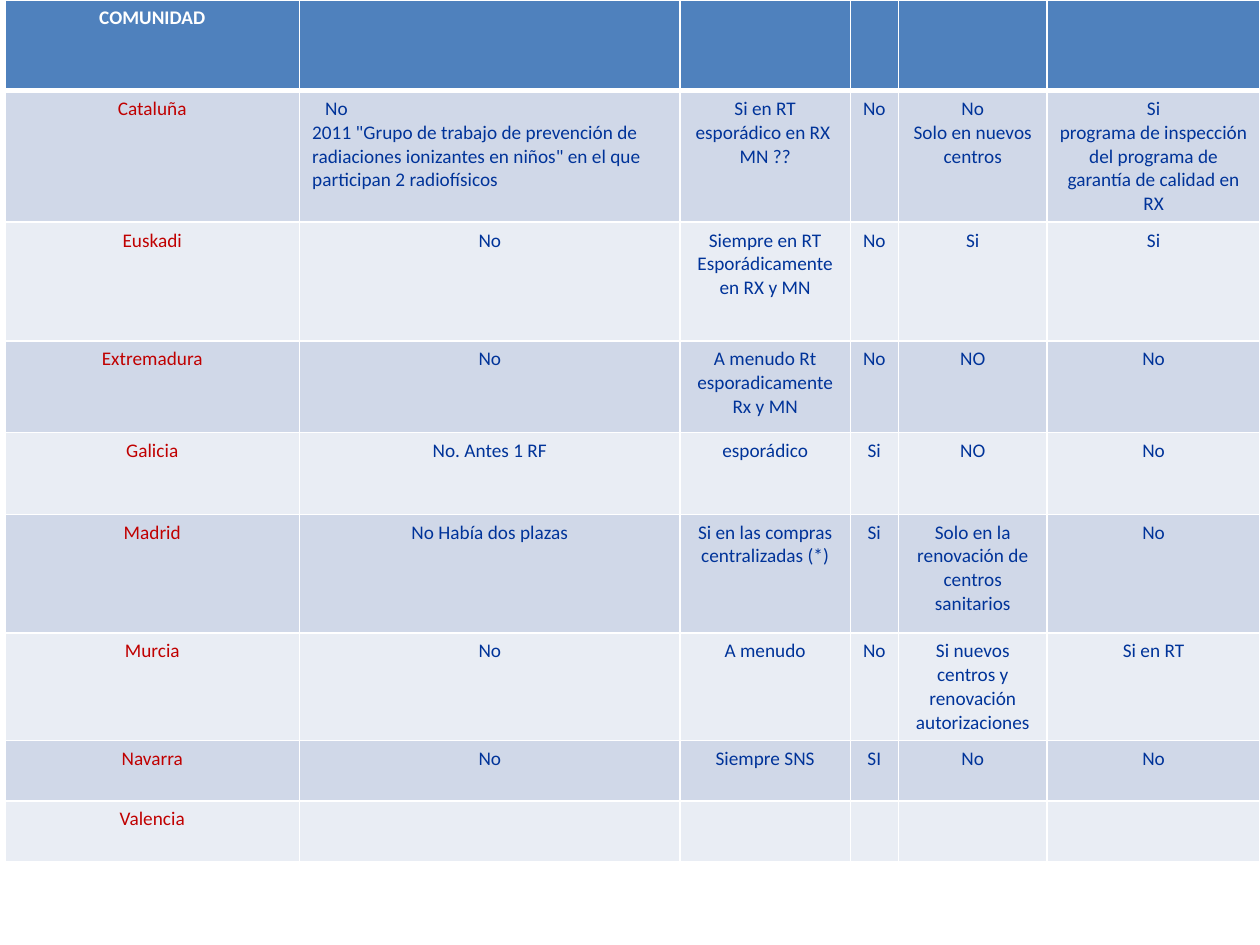
"""Build the slide that compares the regional communities in one table."""
from dataclasses import dataclass

from lxml import etree
from pptx import Presentation
from pptx import util as u
from pptx.dml.color import RGBColor
from pptx.enum import text
from pptx.oxml.ns import qn


@dataclass(frozen=True)
class Theme:
    font: str = "Calibri"
    size: int = 11
    header: str = "4F81BD"
    bands: tuple = ("D0D8E8", "E9EDF4")
    white: str = "FFFFFF"
    community: str = "C00000"
    answer: str = "003399"
    rule: int = 1
    header_rule: int = 3


THEME = Theme()
COLUMN_WIDTHS = (5.94, 7.67, 3.43, 0.97, 3, 4.29)
ROW_HEIGHTS = (1.83, 2.39, 2.39, 1.85, 1.65, 2.39, 1.22, 1.22, 1.22)
COMMUNITIES = (
    ("COMUNIDAD", "", "", "", "", ""),
    ("Cataluña",
     'No\n2011 "Grupo de trabajo de prevención de radiaciones ionizantes '
     'en niños" en el que participan 2 radiofísicos',
     "Si en RT esporádico en RX \nMN ??", "No",
     "No\nSolo en nuevos centros",
     "Si\nprograma de inspección del programa de garantía de calidad en RX"),
    ("Euskadi", "No", "Siempre en RT\nEsporádicamente en RX y MN", "No", "Si", "Si"),
    ("Extremadura", "No", "A menudo Rt esporadicamente Rx y MN", "No", "NO", "No"),
    ("Galicia", "No. Antes 1 RF", "esporádico", "Si", "NO", "No"),
    ("Madrid", "No Había dos plazas", "Si en las compras centralizadas (*)", "Si",
     "Solo en la renovación de centros sanitarios", "No"),
    ("Murcia", "No", "A menudo", "No",
     "Si nuevos centros y renovación autorizaciones", "Si en RT"),
    ("Navarra", "No", "Siempre SNS", "SI", "No", "No"),
    ("Valencia", "", "", "", "", ""),
)


def draw_borders(cell, top, bottom):
    """Rule the four sides of a cell in white, with widths in points."""
    properties = cell._tc.get_or_add_tcPr()
    for side, width in (("L", THEME.rule), ("R", THEME.rule), ("T", top), ("B", bottom)):
        line = etree.SubElement(properties, qn(f"a:ln{side}"), w=str(u.Pt(width)))
        fill = etree.SubElement(line, qn("a:solidFill"))
        etree.SubElement(fill, qn("a:srgbClr"), val=THEME.white)


def write_cell(cell, wording, colour, bold):
    """Fill a cell with centred wording in the table's type."""
    cell.text_frame.text = wording
    for paragraph in cell.text_frame.paragraphs:
        paragraph.alignment = text.PP_ALIGN.CENTER
        paragraph.font.size = u.Pt(THEME.size)
        for run in paragraph.runs:
            run.font.name = THEME.font
            run.font.size = u.Pt(THEME.size)
            run.font.bold = bold
            run.font.color.rgb = RGBColor.from_string(colour)


def align_note(cell):
    """Set a longer note flush left, with its first answer indented."""
    for paragraph in cell.text_frame.paragraphs:
        paragraph.alignment = text.PP_ALIGN.LEFT
    answer = cell.text_frame.paragraphs[0]
    answer._p.get_or_add_pPr().set("indent", str(u.Cm(0.26)))


def add_communities(slide):
    """Add the table with one banded row for each community."""
    table = slide.shapes.add_table(
        len(ROW_HEIGHTS), len(COLUMN_WIDTHS), u.Cm(0.1), 0,
        u.Cm(sum(COLUMN_WIDTHS)), u.Cm(sum(ROW_HEIGHTS))).table
    table.horz_banding = False
    for column, width in zip(table.columns, COLUMN_WIDTHS):
        column.width = u.Cm(width)
    for r, (height, answers) in enumerate(zip(ROW_HEIGHTS, COMMUNITIES)):
        table.rows[r].height = u.Cm(height)
        is_header = r == 0
        band = THEME.header if is_header else THEME.bands[(r - 1) % 2]
        for c, wording in enumerate(answers):
            cell = table.cell(r, c)
            draw_borders(cell, THEME.header_rule if r == 1 else THEME.rule,
                         THEME.header_rule if is_header else THEME.rule)
            cell.fill.solid()
            cell.fill.fore_color.rgb = RGBColor.from_string(band)
            body_colour = THEME.community if c == 0 else THEME.answer
            write_cell(cell, wording, THEME.white if is_header else body_colour, is_header)
    align_note(table.cell(1, 1))


def main():
    """Create the presentation and save it."""
    presentation = Presentation()
    presentation.slide_width = u.Cm(25.4)
    presentation.slide_height = u.Cm(19.05)
    slide = presentation.slides.add_slide(presentation.slide_layouts[6])
    add_communities(slide)
    presentation.save("out.pptx")


if __name__ == "__main__":
    main()
